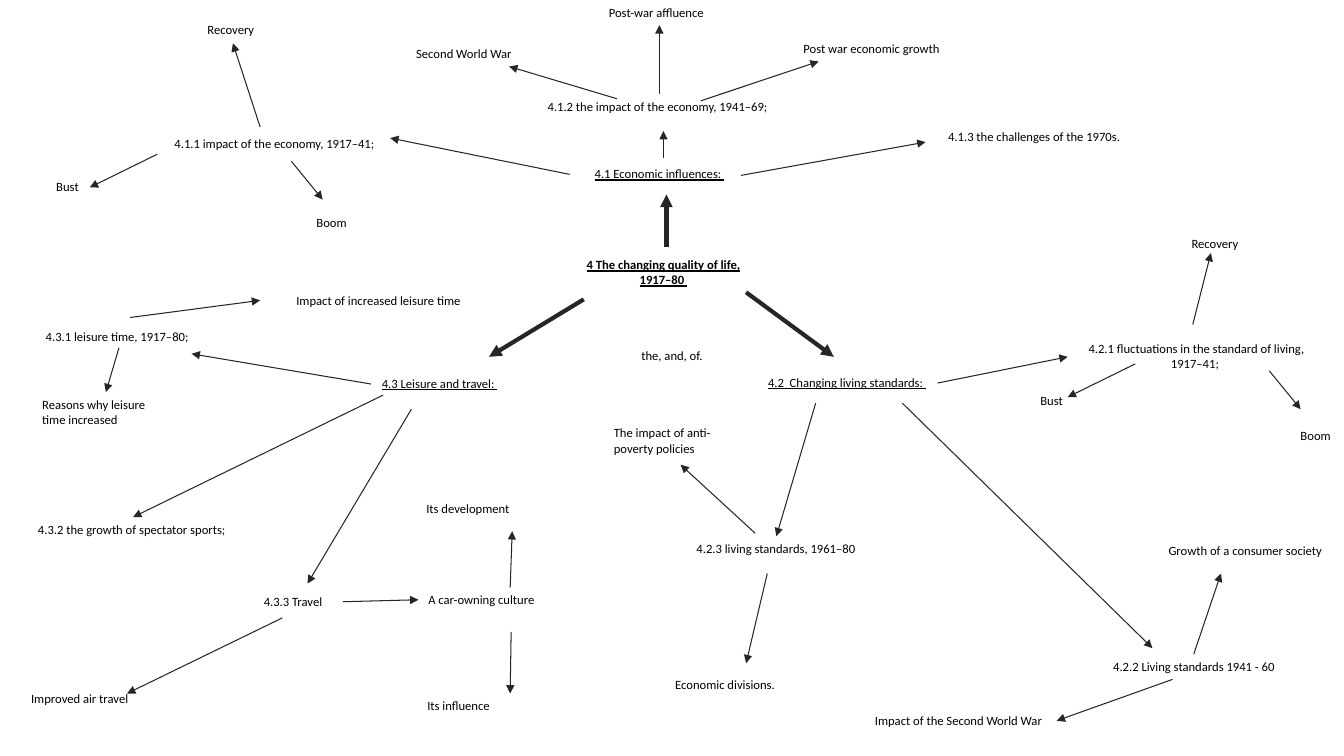
"""Draw a mind map of the changing quality of life, 1917–80."""
from dataclasses import dataclass

import lxml.etree
import pptx
import pptx.dml.color
import pptx.enum.shapes
import pptx.enum.text
import pptx.oxml.ns
import pptx.util

COLS, ROWS = 133.3, 75
CELL = pptx.util.Inches(0.1)
INK, BLACK = "262626", "000000"
LEFT = pptx.enum.text.PP_ALIGN.LEFT
MID = pptx.enum.text.PP_ALIGN.CENTER
FONT = {"name": "Calibri", "size": pptx.util.Pt(9), "bold": False, "underline": False}
HEAD = FONT | {"underline": True}
TITLE = HEAD | {"bold": True}
FRAME = {
    "auto_size": pptx.enum.text.MSO_AUTO_SIZE.SHAPE_TO_FIT_TEXT,
    "vertical_anchor": pptx.enum.text.MSO_ANCHOR.TOP,
    "margin_left": CELL, "margin_right": CELL,
    "margin_top": CELL // 2, "margin_bottom": CELL // 2,
}


@dataclass(frozen=True)
class Label:
    """A piece of text placed in columns and rows."""
    text: str
    col: float
    row: float
    wide: float
    align: int = LEFT
    wrap: bool = False
    high: float = 2.5
    font: dict = None


@dataclass(frozen=True)
class Arrow:
    """An arrow from one grid point to another."""
    col: float
    row: float
    tocol: float
    torow: float
    width: float = 0.75


TOPIC = Label("4 The changing quality of life, 1917–80 ", 56.5, 25, 18.6, MID, True, 4, TITLE)
HEADS = [
    Label("4.1 Economic influences: ", 57.9, 16, 15, MID, font=HEAD),
    Label("4.2  Changing living standards: ", 75.1, 36.7, 17.8, MID, font=HEAD),
    Label("4.3 Leisure and travel: ", 36.8, 36.8, 13.6, MID, font=HEAD),
]
PARTS = [
    Label("4.1.1 impact of the economy, 1917–41; ", 16.1, 13, 22.5, MID),
    Label("4.1.2 the impact of the economy, 1941–69; ", 32, 9.3, 66.7, MID, True),
    Label("4.1.3 the challenges of the 1970s. ", 93, 12.3, 19.4, MID),
    Label("4.2.1 fluctuations in the standard of living, 1917–41; ", 105.9, 33.3, 25.5, MID, True, 4),
    Label("4.2.2 Living standards 1941 - 60", 107.3, 64.9, 22.2, MID, True),
    Label("4.2.3 living standards, 1961–80", 56.8, 53.2, 40.3, MID, True),
    Label("4.3.1 leisure time, 1917–80; ", -2.8, 32.1, 29.1, MID, True),
    Label("4.3.2 the growth of spectator sports; ", 2.7, 51.3, 21, MID),
    Label("4.3.3 Travel ", 10.8, 58.4, 36.8, MID, True),
]
LEAVES = [
    Label("Second World War", 40.3, 4.1, 11.7),
    Label("Post-war affluence", 59.4, 0, 11.9),
    Label("Post war economic growth", 78.7, 3.6, 15.7),
    Label("Impact of the Second World War", 85.3, 70.2, 19.5, MID, True),
    Label("Growth of a consumer society", 114.3, 53.4, 18.4, MID, True),
    Label("Economic divisions. ", 38.7, 66.7, 66.7, MID, True),
    Label("The impact of anti-poverty policies", 59.9, 41.7, 11.7, LEFT, True, 4),
    Label("the, and, of.", 33.3, 34, 66.7, MID, True),
    Label("A car-owning culture", 41.5, 58.2, 12.7),
    Label("Its development", 41.3, 49.2, 10.4),
    Label("Its influence", 41.4, 68.7, 8.3),
    Label("Improved air travel", 2.1, 68, 11.9),
    Label("Impact of increased leisure time", 28.4, 28.6, 18.8),
    Label("Reasons why leisure time increased", 3.2, 38.9, 14.5, LEFT, True, 4),
]
CYCLE = [
    Label(text, col + right, row + down, wide)
    for right, down in ((0, 0), (97.6, 21.2))
    for text, col, row, wide in (
        ("Boom", 30.4, 20.8, 5.1), ("Bust", 4.6, 17.3, 4.3), ("Recovery", 19.6, 1.7, 7))
]
TRUNKS = [
    Arrow(57.9, 29.7, 48.5, 35.4, 3),
    Arrow(74, 29, 82.7, 35.4, 3),
    Arrow(66.1, 24.5, 66.1, 19.3, 3),
]
ECONOMY = [
    Arrow(56.5, 17.3, 38.7, 13.7), Arrow(73.5, 17.4, 91.8, 14.1),
    Arrow(65.8, 15.7, 65.8, 13), Arrow(25.8, 12.6, 23.1, 4.3),
    Arrow(61.2, 9.8, 50.5, 6.6), Arrow(65.4, 9.3, 65.4, 2.5),
    Arrow(69.5, 10, 81.2, 6.1),
]
LIVING = [
    Arrow(93, 38, 105.9, 35.4), Arrow(118.3, 32.2, 120.1, 25.1),
    Arrow(89.5, 40, 114.3, 64.3), Arrow(80.9, 40, 77, 53.2),
    Arrow(118.4, 64.9, 121.1, 56.9), Arrow(116.3, 67.4, 104.8, 71.5),
    Arrow(74.9, 52.9, 67.5, 46.1), Arrow(76.1, 56.9, 74, 65.8),
]
LEISURE = [
    Arrow(36.8, 38.1, 19, 35.1), Arrow(11.8, 34.5, 10.5, 38.9),
    Arrow(12.9, 31.5, 25.8, 29.8), Arrow(38, 39.2, 13.2, 51.3),
    Arrow(40.8, 40.6, 30.5, 57.9), Arrow(28, 61.3, 12.6, 68.8),
    Arrow(34, 59.7, 41.5, 59.5), Arrow(50.6, 58.3, 50.8, 52.7),
    Arrow(50.7, 62.7, 50.6, 68.8),
]
SWINGS = [
    Arrow(col + right, row + down, tocol + right, torow + down)
    for right, down in ((0, 0), (97, 20.8))
    for col, row, tocol, torow in ((15.6, 15.3, 8.9, 18.6), (28.9, 16, 32, 19.8))
]


def cells(*counts: float) -> list[int]:
    """Turn grid counts into lengths."""
    return [round(count * CELL) for count in counts]


def color(code: str) -> pptx.dml.color.RGBColor:
    """Turn a hex string into a colour."""
    return pptx.dml.color.RGBColor.from_string(code)


def apply(target: object, values: dict) -> None:
    """Set each format value on the target."""
    for name, value in values.items():
        setattr(target, name, value)


def write(shape: object, label: Label) -> None:
    """Place a shape and fill it with the label's text."""
    box = cells(label.col, label.row, label.wide, label.high)
    apply(shape, dict(zip(("left", "top", "width", "height"), box)))
    apply(shape.text_frame, FRAME | {"word_wrap": label.wrap})
    para = shape.text_frame.paragraphs[0]
    para.alignment = label.align
    run = para.add_run()
    run.text = label.text
    apply(run.font, label.font or FONT)
    run.font.color.rgb = color(BLACK)


def link(slide: object, arrow: Arrow) -> None:
    """Draw one arrow."""
    ends = cells(arrow.col, arrow.row, arrow.tocol, arrow.torow)
    line = slide.shapes.add_connector(pptx.enum.shapes.MSO_CONNECTOR.STRAIGHT, *ends)
    line.line.color.rgb = color(INK)
    line.line.width = pptx.util.Pt(arrow.width)
    name = pptx.oxml.ns.qn
    lxml.etree.SubElement(line.get_or_add_ln(), name("a:tailEnd"), type="triangle")
    lxml.etree.SubElement(line._element.spPr, name("a:effectLst"))


def main() -> None:
    """Build and save the slide."""
    deck = pptx.Presentation()
    deck.slide_width, deck.slide_height = cells(COLS, ROWS)
    slide = deck.slides.add_slide(deck.slide_layouts[5])
    write(slide.shapes.title, TOPIC)
    for label in HEADS + PARTS + LEAVES + CYCLE:
        write(slide.shapes.add_textbox(0, 0, CELL, CELL), label)
    for arrow in TRUNKS + ECONOMY + LIVING + LEISURE + SWINGS:
        link(slide, arrow)
    deck.save("out.pptx")


if __name__ == "__main__":
    main()
